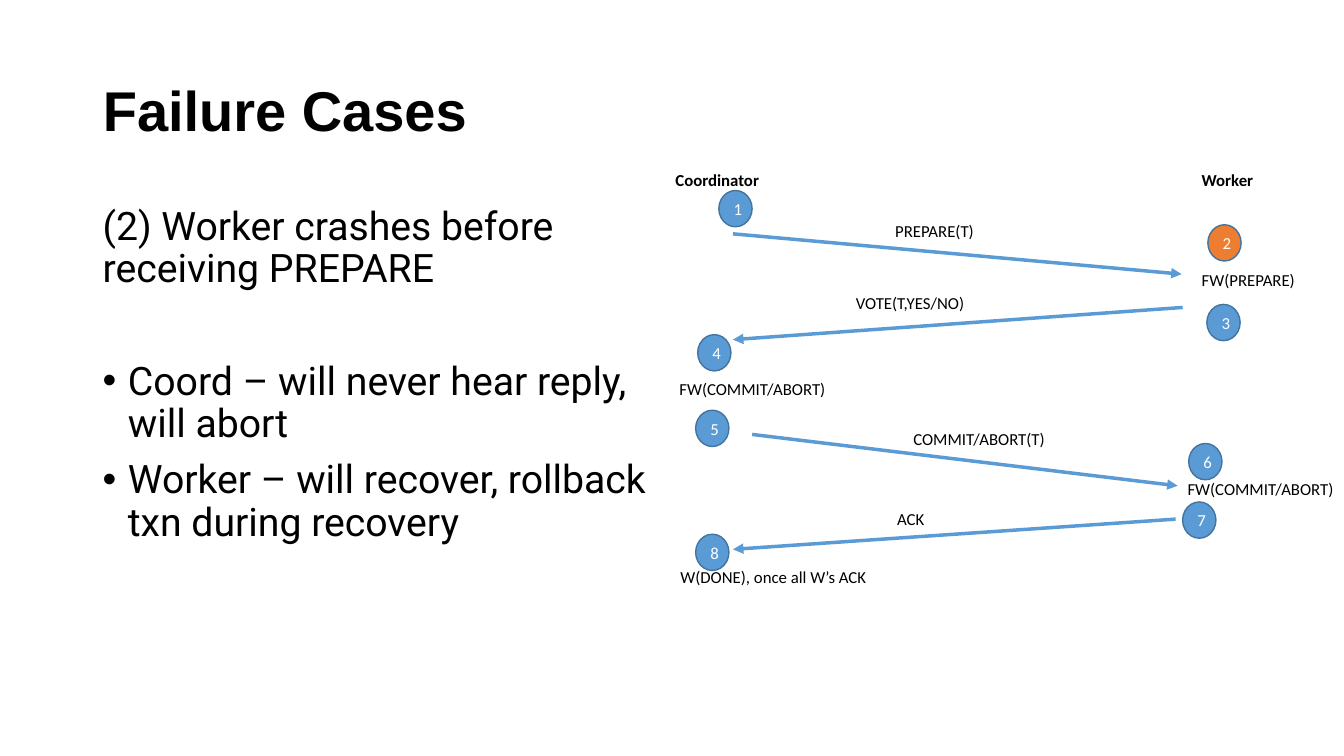
from dataclasses import dataclass
from typing import Any

from lxml.etree import SubElement
from pptx import Presentation
from pptx.dml.color import RGBColor
from pptx.enum.shapes import MSO_CONNECTOR, MSO_SHAPE
from pptx.enum.text import MSO_ANCHOR, MSO_AUTO_SIZE, PP_ALIGN
from pptx.oxml.ns import qn
from pptx.util import Inches, Pt


@dataclass(frozen=True)
class Theme:
    black: RGBColor = RGBColor(0, 0, 0)
    white: RGBColor = RGBColor(255, 255, 255)
    blue: RGBColor = RGBColor(0x5B, 0x9B, 0xD5)
    outline: RGBColor = RGBColor(0x43, 0x73, 0x9E)
    orange: RGBColor = RGBColor(0xED, 0x7D, 0x31)
    title_font: str = "Arial"
    body_font: str = "Roboto"
    diagram_font: str = "Calibri"
    title_size: int = 40
    body_size: int = 28
    diagram_size: int = 12


@dataclass(frozen=True)
class Label:
    text: str
    left: float
    top: float
    width: float
    bold: bool = False


@dataclass(frozen=True)
class Message:
    start: tuple[float, float]
    end: tuple[float, float]


@dataclass(frozen=True)
class Step:
    left: float
    top: float
    failed: bool = False


@dataclass(frozen=True)
class Point:
    text: str
    space_before: int = 10
    bulleted: bool = False


THEME = Theme()
LABEL_HEIGHT = 0.3
STEP_WIDTH, STEP_HEIGHT = 0.33, 0.36

POINTS = [
    Point("(2) Worker crashes before receiving PREPARE"),
    Point("Coord – will never hear reply, will abort", 50, True),
    Point("Worker – will recover, rollback txn during recovery", bulleted=True),
]
LABELS = [
    Label("Coordinator", 6.6, 1.63, 2.08, True),
    Label("Worker", 11.82, 1.63, 1.04, True),
    Label("PREPARE(T)", 8.78, 2.14, 2.04),
    Label("FW(PREPARE)", 11.82, 2.63, 1.14),
    Label("VOTE(T,YES/NO)", 8.39, 2.86, 2.04),
    Label("FW(COMMIT/ABORT)", 6.64, 3.71, 2.04),
    Label("COMMIT/ABORT(T)", 8.96, 4.2, 1.85),
    Label("FW(COMMIT/ABORT)", 11.68, 4.7, 1.66),
    Label("W(DONE), once all W’s ACK", 6.65, 5.57, 2.49),
    Label("ACK", 8.8, 5, 1.85),
]
MESSAGES = [
    Message((7.27, 2.32), (11.72, 2.72)),
    Message((11.73, 3.05), (7.27, 3.37)),
    Message((7.46, 4.31), (11.68, 4.82)),
    Message((11.66, 5.15), (7.27, 5.45)),
]
STEPS = [
    Step(7.13, 1.89),
    Step(11.98, 2.23, failed=True),
    Step(11.97, 3.02),
    Step(6.92, 3.32),
    Step(6.9, 4.07),
    Step(11.79, 4.4),
    Step(11.73, 4.98),
    Step(6.9, 5.3),
]


def apply_format(target: Any, values: dict[str, Any]) -> None:
    for name, value in values.items():
        setattr(target, name, value)


def write_span(para: Any, text: str, font: str, size: int,
               color: RGBColor = THEME.black, bold: bool = False) -> None:
    span = para.add_run()
    span.text = text
    apply_format(span.font, {"name": font, "size": Pt(size), "bold": bold})
    span.font.color.rgb = color


def draw_title(page: Any, text: str) -> None:
    title = page.shapes.title
    apply_format(title, {"left": Inches(0.92), "top": Inches(0.4),
                         "width": Inches(11.5), "height": Inches(1.45)})
    apply_format(title.text_frame, {"vertical_anchor": MSO_ANCHOR.MIDDLE,
                                    "auto_size": MSO_AUTO_SIZE.NONE})
    para = title.text_frame.paragraphs[0]
    apply_format(para, {"alignment": PP_ALIGN.LEFT, "line_spacing": 0.9})
    write_span(para, text, THEME.title_font, THEME.title_size, bold=True)


def add_bullet(para: Any) -> None:
    properties = para._p.get_or_add_pPr()
    properties.set("marL", str(Inches(0.25)))
    properties.set("indent", str(Inches(-0.25)))
    SubElement(properties, qn("a:buFont")).set("typeface", "Arial")
    SubElement(properties, qn("a:buChar")).set("char", "•")


def draw_points(page: Any, points: list[Point]) -> None:
    box = page.shapes.add_textbox(Inches(0.92), Inches(2), Inches(5.75), Inches(4.76))
    frame = box.text_frame
    frame.word_wrap = True
    for index, point in enumerate(points):
        para = frame.add_paragraph() if index else frame.paragraphs[0]
        apply_format(para, {"line_spacing": 0.9,
                            "space_before": Pt(point.space_before)})
        if point.bulleted:
            add_bullet(para)
        write_span(para, point.text, THEME.body_font, THEME.body_size)


def draw_label(diagram: Any, label: Label) -> None:
    box = diagram.shapes.add_textbox(Inches(label.left), Inches(label.top),
                                     Inches(label.width), Inches(LABEL_HEIGHT))
    apply_format(box.text_frame, {"word_wrap": True,
                                  "auto_size": MSO_AUTO_SIZE.SHAPE_TO_FIT_TEXT})
    write_span(box.text_frame.paragraphs[0], label.text, THEME.diagram_font,
               THEME.diagram_size, bold=label.bold)


def draw_message(diagram: Any, message: Message) -> None:
    ends = [Inches(value) for value in (*message.start, *message.end)]
    arrow = diagram.shapes.add_connector(MSO_CONNECTOR.STRAIGHT, *ends)
    arrow.line.color.rgb = THEME.blue
    arrow.line.width = Pt(2.5)
    SubElement(arrow.line._get_or_add_ln(), qn("a:tailEnd")).set("type", "triangle")
    SubElement(arrow._element.spPr, qn("a:effectLst"))


def draw_step(diagram: Any, number: int, step: Step) -> None:
    circle = diagram.shapes.add_shape(MSO_SHAPE.OVAL, Inches(step.left), Inches(step.top),
                                      Inches(STEP_WIDTH), Inches(STEP_HEIGHT))
    circle.shadow.inherit = False
    circle.fill.solid()
    circle.fill.fore_color.rgb = THEME.orange if step.failed else THEME.blue
    circle.line.color.rgb = THEME.outline
    circle.line.width = Pt(1)
    circle.text_frame.vertical_anchor = MSO_ANCHOR.MIDDLE
    para = circle.text_frame.paragraphs[0]
    para.alignment = PP_ALIGN.CENTER
    write_span(para, str(number), THEME.diagram_font, THEME.diagram_size, THEME.white)


def main() -> None:
    deck = Presentation()
    apply_format(deck, {"slide_width": Inches(13.33), "slide_height": Inches(7.5)})
    page = deck.slides.add_slide(deck.slide_layouts.get_by_name("Title Only"))
    draw_title(page, "Failure Cases")
    draw_points(page, POINTS)
    diagram = page.shapes.add_group_shape()
    for message in MESSAGES:
        draw_message(diagram, message)
    for label in LABELS:
        draw_label(diagram, label)
    for number, step in enumerate(STEPS, start=1):
        draw_step(diagram, number, step)
    deck.save("out.pptx")


if __name__ == "__main__":
    main()
